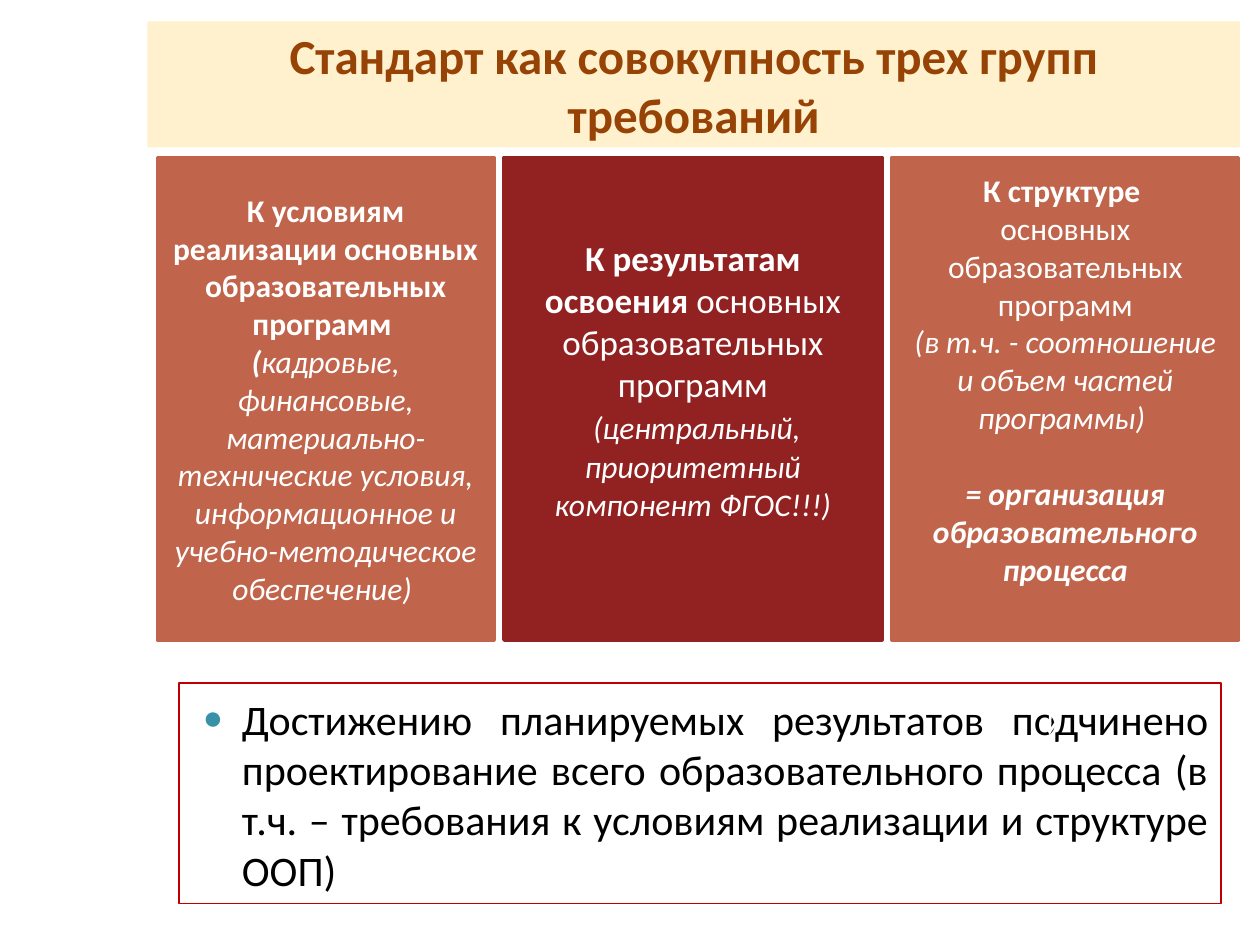
from dataclasses import dataclass

from lxml.etree import SubElement
from pptx import Presentation
from pptx.dml.color import RGBColor
from pptx.enum.shapes import MSO_CONNECTOR, MSO_SHAPE
from pptx.enum.text import MSO_ANCHOR, MSO_AUTO_SIZE, PP_ALIGN
from pptx.oxml.ns import qn
from pptx.util import Inches, Pt

FONT = "Calibri"
WHITE = RGBColor(0xFF, 0xFF, 0xFF)
BLACK = RGBColor(0, 0, 0)
CREAM = RGBColor(0xFF, 0xF1, 0xCE)
BROWN = RGBColor(0x96, 0x43, 0x05)
TERRACOTTA = RGBColor(0xC0, 0x65, 0x4C)
DARK_RED = RGBColor(0x92, 0x22, 0x22)
RED = RGBColor(0xC0, 0, 0)
BLANK_LINE = Pt(22)
PANEL_TOP, PANEL_HEIGHT = Inches(1.25), Inches(3.83)


@dataclass
class Span:
    text: str
    size: int = 18
    bold: bool = False
    italic: bool = False
    color: RGBColor = WHITE


@dataclass
class Para:
    spans: list[Span]
    space_before: int = 0


@dataclass
class Panel:
    left: float
    width: float
    color: RGBColor
    paras: list[Para]
    lifted: bool = False  # text sits one line higher than the middle


PANELS = [
    Panel(1.25, 2.67, TERRACOTTA, [
        Para([Span("К условиям реализации основных образовательных программ ", bold=True)]),
        Para([Span("(", bold=True, italic=True),
              Span("кадровые, финансовые, материально-технические условия, "
                   "информационное и учебно-методическое обеспечение) ", italic=True)]),
    ]),
    Panel(4, 3, DARK_RED, [
        Para([Span("К результатам освоения ", 20, bold=True),
              Span("основных образовательных программ", 20)]),
        Para([Span(" ", 20, italic=True),
              Span("(центральный, приоритетный компонент ФГОС!!!)", italic=True)]),
    ], lifted=True),
    Panel(7.08, 2.75, TERRACOTTA, [
        Para([Span("К структуре ", bold=True)]),
        Para([Span("основных образовательных программ")]),
        Para([Span("(в т.ч. - соотношение и объем частей программы) ", italic=True)]),
        Para([Span("= организация образовательного процесса", bold=True, italic=True)],
             BLANK_LINE),
    ], lifted=True),
]


def place(box, left: float, top: float, width: float, height: float) -> None:
    box.left, box.top = Inches(left), Inches(top)
    box.width, box.height = Inches(width), Inches(height)


def add_span(paragraph, span: Span) -> None:
    run = paragraph.add_run()
    run.text = span.text
    font = run.font
    font.name, font.size = FONT, Pt(span.size)
    font.bold, font.italic = span.bold, span.italic
    font.color.rgb = span.color


def write(frame, paras: list[Para], align: PP_ALIGN = PP_ALIGN.CENTER) -> None:
    frame.word_wrap = True
    frame.auto_size = MSO_AUTO_SIZE.NONE
    for index, para in enumerate(paras):
        paragraph = frame.add_paragraph() if index else frame.paragraphs[0]
        paragraph.alignment = align
        paragraph.space_before = para.space_before
        for span in para.spans:
            add_span(paragraph, span)


def add_panel(page, panel: Panel) -> None:
    box = page.shapes.add_shape(MSO_SHAPE.RECTANGLE, Inches(panel.left), PANEL_TOP,
                                Inches(panel.width), PANEL_HEIGHT)
    box.shadow.inherit = False
    box.fill.solid()
    box.fill.fore_color.rgb = panel.color
    box.line.color.rgb = panel.color
    box.line.width = Pt(2)
    frame = box.text_frame
    frame.vertical_anchor = MSO_ANCHOR.MIDDLE
    if panel.lifted:
        frame.margin_bottom = Inches(0.05) + BLANK_LINE
    write(frame, panel.paras)


def add_bullet(paragraph) -> None:
    properties = paragraph._p.get_or_add_pPr()
    properties.set("marL", str(Inches(0.4)))
    properties.set("indent", str(Inches(-0.31)))
    color = SubElement(properties, qn("a:buClr"))
    SubElement(color, qn("a:srgbClr"), val="3891A7")
    SubElement(properties, qn("a:buSzPct"), val="80000")
    SubElement(properties, qn("a:buChar"), char="●")


def add_arrow(page) -> None:
    arrow = page.shapes.add_connector(MSO_CONNECTOR.STRAIGHT, Inches(8.34), Inches(5.58),
                                      Inches(8.33), Inches(5.83))
    arrow.line.color.rgb = WHITE
    arrow.line.width = Pt(1.5)
    SubElement(arrow.line._get_or_add_ln(), qn("a:tailEnd"), type="arrow")
    SubElement(arrow._element.spPr, qn("a:effectLst"))


def main() -> None:
    deck = Presentation()
    deck.slide_width, deck.slide_height = Inches(10), Inches(7.5)
    page = deck.slides.add_slide(deck.slide_layouts[1])

    # Title band
    title = page.shapes.title
    place(title, 1.17, 0.17, 8.67, 1)
    title.fill.solid()
    title.fill.fore_color.rgb = CREAM
    title.text_frame.vertical_anchor = MSO_ANCHOR.MIDDLE
    write(title.text_frame, [Para([Span("Стандарт как совокупность трех групп требований",
                                        28, bold=True, color=BROWN)])])

    # Three groups of requirements
    for panel in PANELS:
        add_panel(page, panel)

    # Conclusion
    body = page.placeholders[1]
    place(body, 1.42, 5.42, 8.27, 1.75)
    body.line.color.rgb = RED
    body.line.width = Pt(0.75)
    frame = body.text_frame
    frame.margin_top = frame.margin_bottom = Inches(0.08)
    conclusion = Span("Достижению планируемых результатов подчинено проектирование всего "
                      "образовательного процесса (в т.ч. – требования к условиям реализации "
                      "и структуре ООП)", 24, color=BLACK)
    write(frame, [Para([conclusion], Pt(6))], PP_ALIGN.JUSTIFY)
    add_bullet(frame.paragraphs[0])
    add_arrow(page)

    deck.save("out.pptx")


if __name__ == "__main__":
    main()
